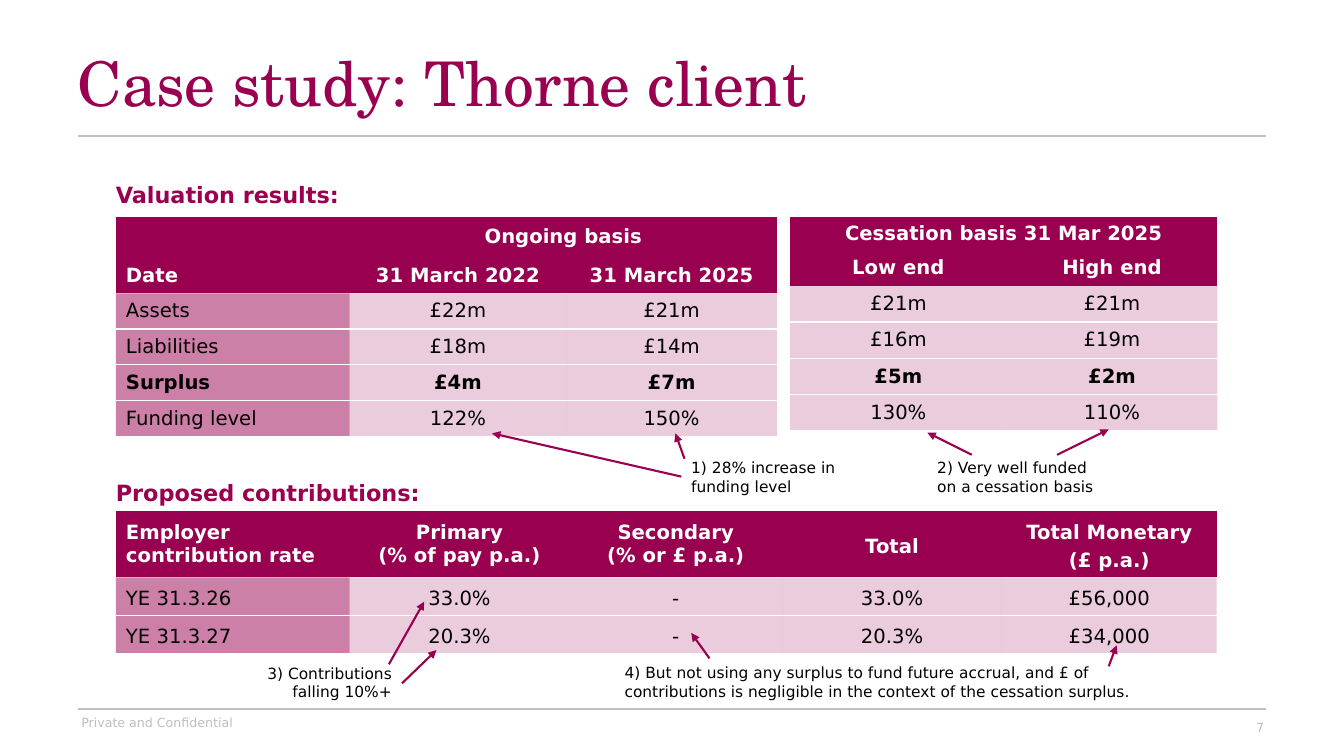
"""Build the case study slide with valuation and contribution tables."""
import dataclasses
import typing

import lxml.etree
import pptx
import pptx.dml.color
import pptx.enum.shapes
import pptx.enum.text
import pptx.oxml.ns
import pptx.slide
import pptx.table
import pptx.text.text
import pptx.util

Cm = pptx.util.Cm
Pt = pptx.util.Pt
qn = pptx.oxml.ns.qn
Align = pptx.enum.text.PP_ALIGN
Anchor = pptx.enum.text.MSO_ANCHOR

COLOURS = {"plum": "9A0050", "grey": "BFBFBF", "white": "FFFFFF", "black": "000000"}
BODY_FONT = "DejaVu Sans"
TITLE_FONT = "TeX Gyre Schola"
NO_STYLE = "{2D5ABB26-0587-4C30-8999-92F81FD0307C}"
LABEL_OPACITY = 50
VALUE_OPACITY = 20


@dataclasses.dataclass
class Label:
    """A text box, with its place in centimetres."""
    text: str
    left: float
    top: float
    width: float
    height: float
    size: float = 11
    colour: str = "black"
    bold: bool = False
    align: typing.Any = Align.LEFT
    anchor: typing.Any = Anchor.TOP


@dataclasses.dataclass
class Line:
    """A straight line, with its ends in centimetres."""
    x1: float
    y1: float
    x2: float
    y2: float
    colour: str = "plum"
    arrow: bool = True


@dataclasses.dataclass
class Grid:
    """A table with plum header rows and tinted body rows."""
    left: float
    top: float
    columns: list[float]
    heights: list[float]
    cells: list[list[str]]
    header_rows: int = 2
    label_column: bool = True
    merge_from: int | None = None
    bold_row: int | None = None
    spaced_from: tuple[int, int] | None = None


LABELS = [
    Label("Valuation results:", 2.67, 4.45, 6.78, 0.94, 16, "plum", True),
    Label("Proposed contributions:", 2.67, 11.94, 8.33, 0.94, 16, "plum", True),
    Label("1) 28% increase in funding level", 17.17, 11.43, 4.8, 1.19),
    Label("2) Very well funded on a cessation basis", 23.37, 11.43, 4.8, 1.19),
    Label("3) Contributions falling 10%+", 5.33, 16.61, 4.8, 1.19, align=Align.RIGHT),
    Label("4) But not using any surplus to fund future accrual, and £ of contributions "
          "is negligible in the context of the cessation surplus.", 15.49, 16.59, 13.31, 1.19),
    Label("Private and Confidential", 1.8, 17.88, 6.02, 0.89, 9, "grey"),
    Label("7", 24.49, 17.98, 7.62, 0.69, 9, "grey", align=Align.RIGHT, anchor=Anchor.MIDDLE),
]

LINES = [
    Line(1.96, 3.43, 31.9, 3.43, "grey", False),
    Line(1.96, 17.86, 31.9, 17.86, "grey", False),
    Line(17.17, 12.01, 12.4, 10.92),
    Line(17.25, 11.56, 17.02, 10.92),
    Line(24.49, 11.46, 23.37, 10.9),
    Line(26.64, 11.46, 27.94, 10.82),
    Line(9.8, 16.74, 10.69, 15.16),
    Line(10.13, 17.22, 11, 16.38),
    Line(17.88, 16.59, 17.42, 15.95),
    Line(27.94, 16.79, 28.14, 16.26),
]

GRIDS = [
    Grid(2.92, 5.46, [5.89, 5.46, 5.31], [0.9] * 6, [
        ["", "Ongoing basis", ""],
        ["Date", "31 March 2022", "31 March 2025"],
        ["Assets", "£22m", "£21m"],
        ["Liabilities", "£18m", "£14m"],
        ["Surplus", "£4m", "£7m"],
        ["Funding level", "122%", "150%"],
    ], merge_from=1, bold_row=4),
    Grid(19.91, 5.46, [5.46, 5.31], [0.83] + [0.91] * 5, [
        ["Cessation basis 31 Mar 2025", ""],
        ["Low end", "High end"],
        ["£21m", "£21m"],
        ["£16m", "£19m"],
        ["£5m", "£2m"],
        ["130%", "110%"],
    ], label_column=False, merge_from=0, bold_row=4),
    Grid(2.92, 12.88, [5.89, 5.54, 5.36, 5.54, 5.41], [1.67, 0.96, 0.96], [
        ["Employer contribution rate", "Primary\n(% of pay p.a.)", "Secondary\n(% or £ p.a.)",
         "Total", "Total Monetary\v(£ p.a.)"],
        ["YE 31.3.26", "33.0%", "-", "33.0%", "£56,000"],
        ["YE 31.3.27", "20.3%", "-", "20.3%", "£34,000"],
    ], header_rows=1, spaced_from=(0, 3)),
]


def write(frame: pptx.text.text.TextFrame, text: str, *, size: float, colour: str,
          font: str = BODY_FONT, bold: bool = False, align: typing.Any = Align.LEFT,
          spacing: typing.Any = None) -> None:
    """Fill a text frame with one formatted paragraph for each line of text."""
    for index, line in enumerate(text.split("\n")):
        para = frame.add_paragraph() if index else frame.paragraphs[0]
        para.text = line
        para.alignment = align
        para.line_spacing = spacing
        for span in para.runs:
            span.font.name = font
            span.font.size = Pt(size)
            span.font.bold = bold
            span.font.color.rgb = pptx.dml.color.RGBColor.from_string(COLOURS[colour])


def draw_title(page: pptx.slide.Slide, text: str) -> None:
    """Move and format the title placeholder."""
    title = page.shapes.title
    title.left, title.top, title.width, title.height = Cm(1.96), Cm(1.35), Cm(24.64), Cm(1.96)
    frame = title.text_frame
    frame.margin_left = frame.margin_right = frame.margin_top = frame.margin_bottom = 0
    frame.vertical_anchor = Anchor.TOP
    frame.auto_size = pptx.enum.text.MSO_AUTO_SIZE.NONE
    write(frame, text, size=44, colour="plum", font=TITLE_FONT, spacing=0.9)


def draw_label(page: pptx.slide.Slide, label: Label) -> None:
    """Add a wrapping text box."""
    box = page.shapes.add_textbox(Cm(label.left), Cm(label.top), Cm(label.width), Cm(label.height))
    box.text_frame.word_wrap = True
    box.text_frame.vertical_anchor = label.anchor
    write(box.text_frame, label.text, size=label.size, colour=label.colour,
          bold=label.bold, align=label.align)


def draw_line(page: pptx.slide.Slide, line: Line) -> None:
    """Add a rule or an arrow."""
    connector = page.shapes.add_connector(pptx.enum.shapes.MSO_CONNECTOR.STRAIGHT,
                                          Cm(line.x1), Cm(line.y1), Cm(line.x2), Cm(line.y2))
    connector.line.width = Pt(1.5)
    connector.line.color.rgb = pptx.dml.color.RGBColor.from_string(COLOURS[line.colour])
    properties = connector.element.spPr
    if line.arrow:
        lxml.etree.SubElement(properties.find(qn("a:ln")), qn("a:tailEnd"), type="triangle")
    lxml.etree.SubElement(properties, qn("a:effectLst"))


def paint_cell(cell: pptx.table._Cell, opacity: int | None) -> None:
    """Fill a cell with plum, and rule off a tinted cell in white."""
    cell.fill.solid()
    cell.fill.fore_color.rgb = pptx.dml.color.RGBColor.from_string(COLOURS["plum"])
    if opacity is None:
        return
    properties = cell._tc.tcPr
    tint = properties.find(".//" + qn("a:srgbClr"))
    lxml.etree.SubElement(tint, qn("a:alpha"), val=str(opacity * 1000))
    border = lxml.etree.Element(qn("a:lnB"), w=str(Pt(1)))
    fill = lxml.etree.SubElement(border, qn("a:solidFill"))
    lxml.etree.SubElement(fill, qn("a:srgbClr"), val=COLOURS["white"])
    properties.insert(0, border)


def draw_grid(page: pptx.slide.Slide, grid: Grid) -> None:
    """Add a table and format each of its cells."""
    holder = page.shapes.add_table(len(grid.heights), len(grid.columns), Cm(grid.left), Cm(grid.top),
                                   Cm(sum(grid.columns)), Cm(sum(grid.heights)))
    holder.element.find(".//" + qn("a:tableStyleId")).text = NO_STYLE
    table = holder.table
    for column, width in zip(table.columns, grid.columns):
        column.width = Cm(width)
    for row, height in zip(table.rows, grid.heights):
        row.height = Cm(height)
    if grid.merge_from is not None:
        table.cell(0, grid.merge_from).merge(table.cell(0, len(grid.columns) - 1))
    for row, texts in enumerate(grid.cells):
        for column, text in enumerate(texts):
            cell = table.cell(row, column)
            header = row < grid.header_rows
            label = grid.label_column and column == 0
            spaced = grid.spaced_from is not None and (row, column) >= grid.spaced_from
            paint_cell(cell, None if header else LABEL_OPACITY if label else VALUE_OPACITY)
            cell.vertical_anchor = Anchor.MIDDLE
            write(cell.text_frame, text, size=14, colour="white" if header else "black",
                  bold=header or row == grid.bold_row, align=Align.LEFT if label else Align.CENTER,
                  spacing=Pt(20) if spaced else None)


def main() -> None:
    """Draw the slide and save the deck."""
    deck = pptx.Presentation()
    deck.slide_width, deck.slide_height = Cm(33.87), Cm(19.05)
    page = deck.slides.add_slide(deck.slide_layouts[5])
    draw_title(page, "Case study: Thorne client")
    for grid in GRIDS:
        draw_grid(page, grid)
    for label in LABELS:
        draw_label(page, label)
    for line in LINES:
        draw_line(page, line)
    deck.save("out.pptx")


if __name__ == "__main__":
    main()
